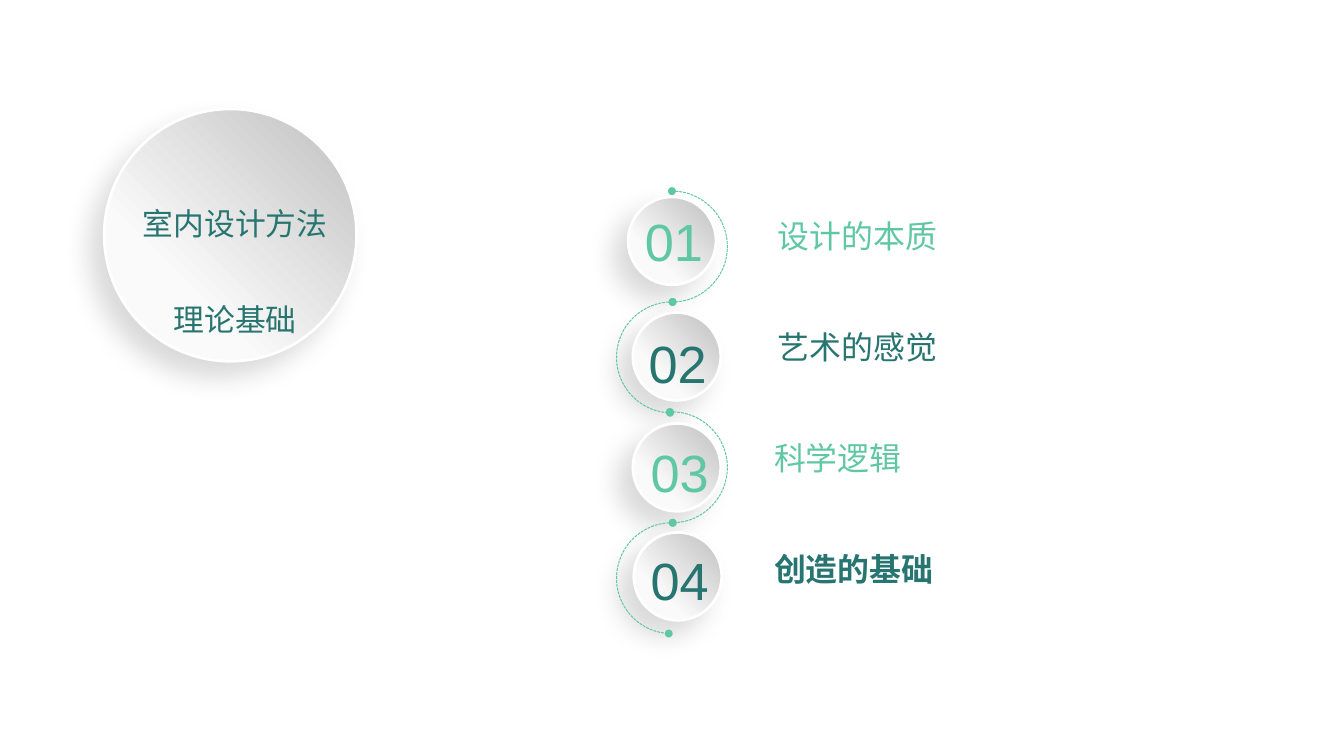
from lxml import etree
from pptx import Presentation, util as u
from pptx.dml.color import RGBColor
from pptx.enum import dml, shapes, text
from pptx.oxml import ns

PX = 9144  # EMU per px, 100 px to the inch
MINT = RGBColor(0x5F, 0xC7, 0xA4)
TEAL = RGBColor(0x27, 0x75, 0x70)
WHITE = RGBColor(0xFF, 0xFF, 0xFF)
GREY = RGBColor(0xBF, 0xBF, 0xBF)
PALE = RGBColor(0xFA, 0xFA, 0xFA)
LATIN_FONT = "Arial"
CHINESE_FONT = "Noto Sans CJK SC"


def add_element(parent, tag, **attributes):
    return etree.SubElement(parent, ns.qn(tag), attributes)


class AgendaSlide:
    def __init__(self, presentation):
        self.slide = presentation.slides.add_slide(presentation.slide_layouts[6])

    def add_shape(self, kind, left, top, size):
        shape = self.slide.shapes.add_shape(
            kind, left * PX, top * PX, size * PX, size * PX)
        shape.shadow.inherit = False
        return shape

    def add_disc(self, left, top, size):
        """Add a grey gradient circle with a soft shadow to the lower left."""
        disc = self.add_shape(shapes.MSO_SHAPE.OVAL, left, top, size)
        disc.fill.gradient()
        disc.fill.gradient_angle = 225
        for stop, color, position in zip(disc.fill.gradient_stops, (GREY, PALE), (0, 0.7)):
            stop.color.rgb = color
            stop.position = position
        disc.line.color.rgb = WHITE
        disc.line.width = u.Pt(2)
        effects = disc._element.spPr.find(ns.qn("a:effectLst"))
        shadow = add_element(effects, "a:outerShdw", blurRad=str(u.Pt(20)),
                             dist=str(u.Pt(15)), dir="8100000", algn="tr", rotWithShape="0")
        shadow_color = add_element(shadow, "a:srgbClr", val="000000")
        add_element(shadow_color, "a:alpha", val="15000")

    def add_arc(self, left, top, size, start, end, flipped):
        """Add a dashed half circle with a dot at each end."""
        arc = self.add_shape(shapes.MSO_SHAPE.ARC, left, top, size)
        arc.adjustments[0] = start
        arc.adjustments[1] = end
        arc.fill.background()
        arc.line.color.rgb = MINT
        arc.line.width = u.Pt(0.75)
        arc.line.dash_style = dml.MSO_LINE.SQUARE_DOT
        line = arc._element.spPr.find(ns.qn("a:ln"))
        for tag in ("a:headEnd", "a:tailEnd"):
            add_element(line, tag, type="oval")
        if flipped:
            arc._element.spPr.get_or_add_xfrm().set("flipH", "1")

    def add_text(self, box, content, size, color, font_name=CHINESE_FONT, bold=None,
                 centred=False, wrap=False, line_spacing=None, baseline=None):
        left, top, width, height = (length * PX for length in box)
        frame = self.slide.shapes.add_textbox(left, top, width, height).text_frame
        frame.text = content
        frame.word_wrap = wrap
        frame.auto_size = text.MSO_AUTO_SIZE.SHAPE_TO_FIT_TEXT
        if centred:
            frame.vertical_anchor = text.MSO_ANCHOR.MIDDLE
        for paragraph in frame.paragraphs:
            paragraph.alignment = text.PP_ALIGN.CENTER if centred else text.PP_ALIGN.LEFT
            paragraph.line_spacing = line_spacing
            for run in paragraph.runs:
                run.font.size = u.Pt(size)
                run.font.bold = bold
                run.font.color.rgb = color
                run.font.name = font_name
                properties = run._r.get_or_add_rPr()
                add_element(properties, "a:ea", typeface=font_name)
                if baseline:
                    properties.set("baseline", str(baseline))


# number, disc position, number position, topic, topic box, colour, bold
TOPICS = [
    ("01", (657, 206), (664, 214), "设计的本质", (804, 222, 188, 50), MINT, None),
    ("02", (662, 327), (668, 341), "艺术的感觉", (804, 338, 188, 50), TEAL, None),
    ("03", (662, 443), (670, 455), "科学逻辑", (800, 454, 155, 50), MINT, None),
    ("04", (663, 557), (670, 568), "创造的基础", (800, 570, 188, 50), TEAL, True),
]
ARC_ANGLES = [(162, 53.57), (161.69, 52.82), (160.73, 53.57), (161.53, 52.02)]
ARC_TOP, ARC_STEP = 200, 115.6


def main():
    presentation = Presentation()
    presentation.slide_width = 1406 * PX
    presentation.slide_height = 791 * PX
    agenda = AgendaSlide(presentation)

    agenda.add_disc(109, 114, 264)
    agenda.add_text((39, 192, 414, 145), "室内设计方法\n理论基础", 40, TEAL,
                    centred=True, wrap=True, line_spacing=1.5, baseline=12000)

    for number, disc, number_at, topic, topic_box, color, bold in TOPICS:
        agenda.add_disc(*disc, 92)
        agenda.add_text((*number_at, 82, 76), number, 39.4, color, LATIN_FONT, centred=True)
        agenda.add_text(topic_box, topic, 24, color, bold=bold)

    for index, (start, end) in enumerate(ARC_ANGLES):
        agenda.add_arc(645, ARC_TOP + round(index * ARC_STEP), 116, start, end,
                       flipped=index % 2 == 1)

    presentation.save("out.pptx")


if __name__ == "__main__":
    main()
